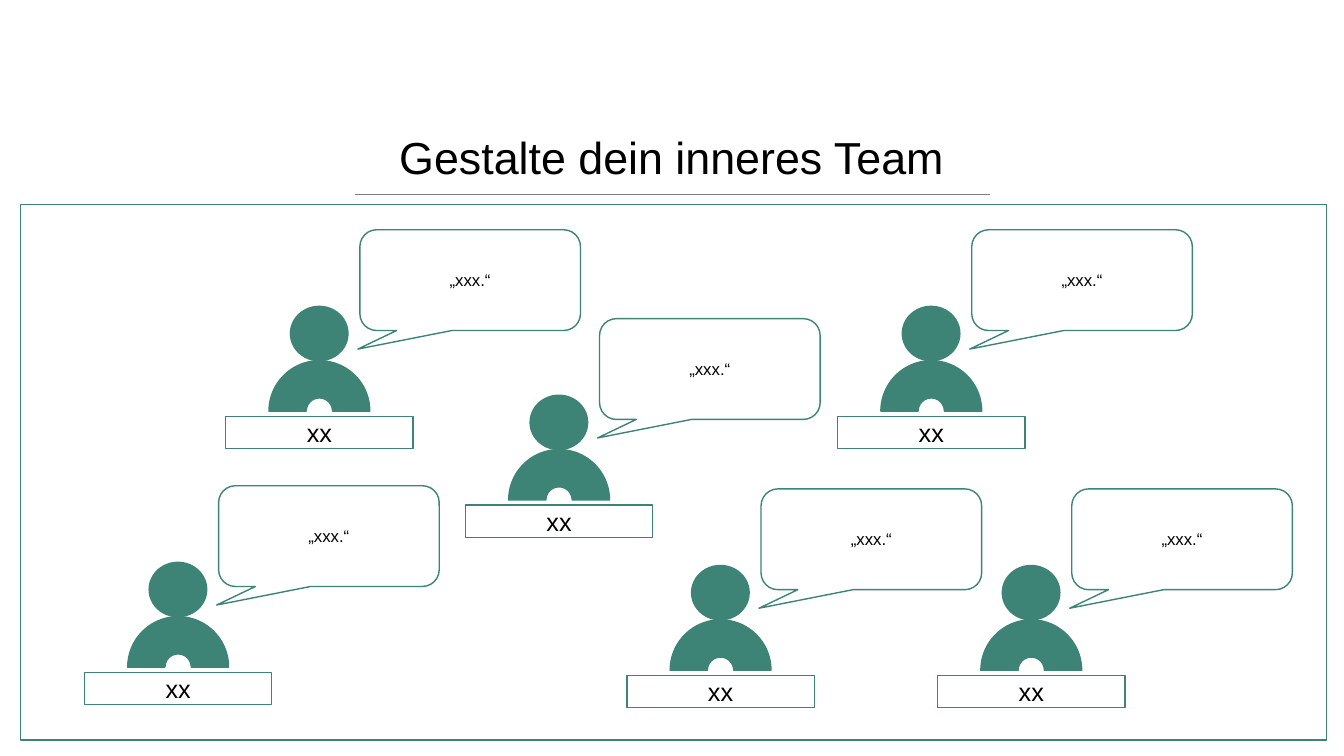
from pptx import Presentation
from pptx.dml.color import RGBColor
from pptx.enum.shapes import MSO_CONNECTOR, MSO_SHAPE
from pptx.enum.text import MSO_ANCHOR, PP_ALIGN
from pptx.oxml.ns import qn
from pptx.util import Cm, Pt
from lxml import etree

HEADING = "Gestalte dein inneres Team"
TEAM = [
    (5.69, 5.79, "xx", "„xxx.“"),
    (11.73, 8.03, "xx", "„xxx.“"),
    (21.11, 5.79, "xx", "„xxx.“"),
    (15.80, 12.32, "xx", "„xxx.“"),
    (23.63, 12.32, "xx", "„xxx.“"),
    (2.13, 12.24, "xx", "„xxx.“"),
]
HEAD = (1.63, 1.93, 1.45, 1.37)
NAMEPLATE = (0, 4.70, 4.72, 0.81)
BODY = (1.09, 3.30, 2.54, 2.54)
SPEECH = (3.38, 0, 5.56, 2.54)
STAGE = (0.51, 5.16, 32.92, 13.49)

GREEN = RGBColor(0x3D, 0x84, 0x77)
WHITE = RGBColor(0xFF, 0xFF, 0xFF)
BLACK = RGBColor(0, 0, 0)
GREY = RGBColor(0x80, 0x80, 0x80)


def write(frame, words, size):
    frame.word_wrap = True
    paragraph = frame.paragraphs[0]
    paragraph.alignment = PP_ALIGN.CENTER
    run = paragraph.add_run()
    run.text = words
    run.font.name = "Arial"
    run.font.size = Pt(size)
    run.font.color.rgb = BLACK
    return paragraph


def draw(slide, preset, box, fill, origin=(0, 0), adjustments=(), words="", size=12):
    left, top, width, height = box
    part = slide.shapes.add_shape(
        preset, Cm(origin[0] + left), Cm(origin[1] + top), Cm(width), Cm(height))
    part.shadow.inherit = False
    part.fill.solid()
    part.fill.fore_color.rgb = fill
    part.line.color.rgb = GREEN
    part.line.width = Pt(1)
    for index, value in enumerate(adjustments):
        part.adjustments[index] = value
    if words:
        part.text_frame.vertical_anchor = MSO_ANCHOR.MIDDLE
        write(part.text_frame, words, size)


def main():
    deck = Presentation()
    deck.slide_width, deck.slide_height = Cm(33.87), Cm(19.05)
    slide = deck.slides.add_slide(deck.slide_layouts[6])

    rule = slide.shapes.add_connector(
        MSO_CONNECTOR.STRAIGHT, Cm(8.94), Cm(4.90), Cm(24.94), Cm(4.90))
    rule.line.color.rgb = GREY
    rule.line.width = Pt(0.25)
    etree.SubElement(rule._element.spPr, qn("a:effectLst"))

    draw(slide, MSO_SHAPE.RECTANGLE, STAGE, WHITE)

    heading = slide.shapes.add_textbox(Cm(5.69), Cm(3.30), Cm(22.48), Cm(1.17))
    write(heading.text_frame, HEADING, 32).line_spacing = 0.9

    for left, top, name, quote in TEAM:
        origin = (left, top)
        draw(slide, MSO_SHAPE.OVAL, HEAD, GREEN, origin)
        draw(slide, MSO_SHAPE.FLOWCHART_PROCESS, NAMEPLATE, WHITE, origin,
             words=name, size=18)
        draw(slide, MSO_SHAPE.BLOCK_ARC, BODY, GREEN, origin, (108, 0, 0.369))
        draw(slide, MSO_SHAPE.ROUNDED_RECTANGULAR_CALLOUT, SPEECH, WHITE, origin,
             (-0.509, 0.684, 0.167), quote, 12)

    deck.save("out.pptx")


if __name__ == "__main__":
    main()
